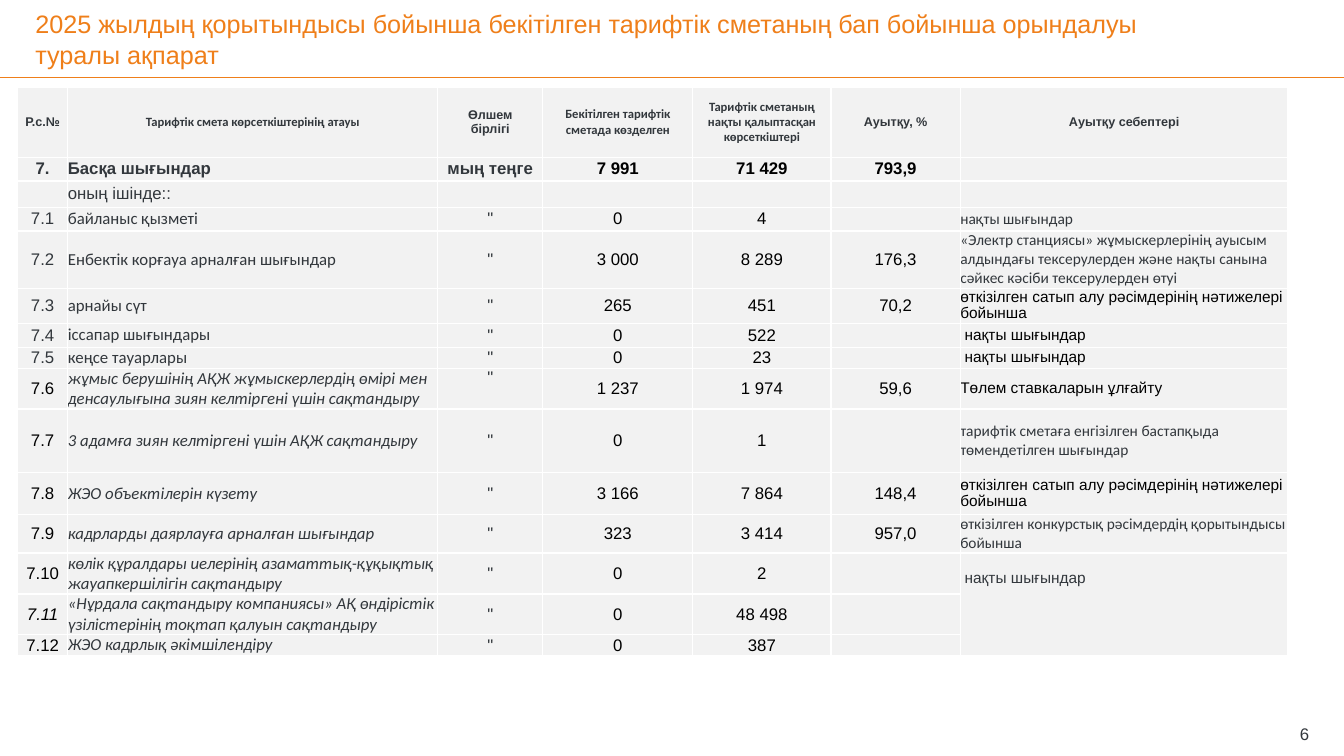
from dataclasses import dataclass, replace

from lxml.etree import SubElement
from pptx import Presentation
from pptx.dml.color import RGBColor
from pptx.enum.shapes import MSO_CONNECTOR
from pptx.enum.text import MSO_ANCHOR as ANCHOR, PP_ALIGN as ALIGN
from pptx.oxml.ns import qn
from pptx.util import Cm, Pt

ORANGE, GREY, BLACK = "EF7F1A", "32373C", "000000"
CELL_FILL, BORDER = "F2F2F2", "FFFFFF"


@dataclass(frozen=True)
class Style:
    font: str = "Arial"
    size: float = 12
    color: str = GREY
    bold: bool = False
    italic: bool = False
    align: ALIGN = ALIGN.CENTER
    spacing: float = 1.0


@dataclass(frozen=True)
class Item:
    """A table row: its height in cm, its texts and the look of its reason."""
    height: float
    number: str
    name: str
    unit: str = '"'
    approved: str = ""
    actual: str = ""
    deviation: str = ""
    reason: str = ""
    reason_style: Style = Style(size=11)


HEADER = Style(size=9, bold=True)
HEADER_CALIBRI = replace(HEADER, font="Calibri")
VALUE = Style(color=BLACK)
NAME = Style(font="Calibri", align=ALIGN.LEFT)
REASON = replace(NAME, size=11)
REASON_ARIAL = Style(size=11, color=BLACK, align=ALIGN.LEFT, spacing=0.95)
REASON_GREY = replace(REASON_ARIAL, color=GREY)

HEADER_HEIGHT = 1.76
COLUMNS = [
    (1.27, "Р.с.№", HEADER),
    (9.32, "Тарифтік смета көрсеткіштерінің атауы", HEADER_CALIBRI),
    (2.65, "Өлшем\nбірлігі", HEADER),
    (3.78, "Бекітілген тарифтік сметада көзделген", HEADER_CALIBRI),
    (3.48, "Тарифтік сметаның нақты қалыптасқан көрсеткіштері", HEADER_CALIBRI),
    (3.26, "Ауытқу, %", HEADER),
    (8.26, "Ауытқу себептері", HEADER),
]
ACTUAL_COSTS = "нақты шығындар"
TENDER = "өткізілген сатып алу рәсімдерінің нәтижелері бойынша"
ITEMS = [
    Item(0.6, "7.", "Басқа шығындар", "мың теңге", "7 991", "71 429", "793,9"),
    Item(0.66, "", "оның ішінде::", ""),
    Item(0.6, "7.1", "байланыс қызметі", '"', "0", "4", "", ACTUAL_COSTS, REASON),
    Item(1.44, "7.2", "Енбектік корғауа арналған шығындар", '"', "3 000", "8 289", "176,3",
         "«Электр станциясы» жұмыскерлерінің ауысым алдындағы тексерулерден "
         "және нақты санына сәйкес кәсіби тексерулерден өтуі", REASON),
    Item(0.86, "7.3", "арнайы сүт", '"', "265", "451", "70,2", TENDER, REASON_ARIAL),
    Item(0.6, "7.4", "іссапар шығындары", '"', "0", "522", "", ACTUAL_COSTS, REASON_ARIAL),
    Item(0.53, "7.5", "кеңсе тауарлары", '"', "0", "23", "", ACTUAL_COSTS, REASON_ARIAL),
    Item(1.03, "7.6", "жұмыс берушінің АҚЖ жұмыскерлердің өмірі мен денсаулығына "
         "зиян келтіргені үшін сақтандыру", '"', "1 237", "1 974", "59,6",
         "Төлем ставкаларын ұлғайту", REASON_ARIAL),
    Item(1.6, "7.7", "3 адамға зиян келтіргені үшін АҚЖ сақтандыру", '"', "0", "1", "",
         "тарифтік сметаға енгізілген бастапқыда төмендетілген шығындар", REASON),
    Item(1.06, "7.8", "ЖЭО объектілерін күзету", '"', "3 166", "7 864", "148,4",
         TENDER, REASON_ARIAL),
    Item(0.97, "7.9", "кадрларды даярлауға арналған шығындар", '"', "323", "3 414", "957,0",
         "өткізілген конкурстық рәсімдердің қорытындысы бойынша", REASON),
    Item(1.03, "7.10", "көлік құралдары иелерінің азаматтық-құқықтық "
         "жауапкершілігін сақтандыру", '"', "0", "2", "", ACTUAL_COSTS, REASON_GREY),
    Item(1.03, "7.11", "«Нұрдала сақтандыру компаниясы» АҚ өндірістік үзілістерінің "
         "тоқтап қалуын сақтандыру", '"', "0", "48 498"),
    Item(0.52, "7.12", "ЖЭО кадрлық әкімшілендіру", '"', "0", "387"),
]
FIRST_INSURANCE = 8  # table row of 7.6, where numbers turn black and names italic
SHARED_REASON = 12   # table row of 7.10, whose reason also covers the rows below


def rgb(color: str) -> RGBColor:
    return RGBColor.from_string(color)


def write(tf, text: str, style: Style) -> None:
    tf.word_wrap = True
    tf.text = text
    for p in tf.paragraphs:
        p.alignment = style.align
        p.line_spacing = style.spacing
        p.font.name, p.font.size = style.font, Pt(style.size)
        p.font.bold, p.font.italic = style.bold, style.italic
        p.font.color.rgb = rgb(style.color)
        if not text:  # keeps an empty cell from stretching its row
            SubElement(p._p, qn("a:endParaRPr"), sz=str(int(style.size * 100)))


def add_text(slide, left, top, width, height, text: str, style: Style) -> None:
    tf = slide.shapes.add_textbox(Cm(left), Cm(top), Cm(width), Cm(height)).text_frame
    tf.margin_left = tf.margin_right = tf.margin_top = tf.margin_bottom = 0
    tf.vertical_anchor = ANCHOR.MIDDLE
    write(tf, text, style)


def fill_cell(cell, text: str, style: Style) -> None:
    cell.margin_left = cell.margin_right = cell.margin_top = cell.margin_bottom = 0
    cell.vertical_anchor = ANCHOR.MIDDLE
    write(cell.text_frame, text, style)
    tcPr = cell._tc.get_or_add_tcPr()
    for side in ("lnL", "lnR", "lnT", "lnB"):
        ln = SubElement(tcPr, qn(f"a:{side}"), w=str(Pt(1)))
        SubElement(SubElement(ln, qn("a:solidFill")), qn("a:srgbClr"), val=BORDER)
    cell.fill.solid()
    cell.fill.fore_color.rgb = rgb(CELL_FILL)


def item_cells(row: int, item: Item) -> list[tuple[str, Style]]:
    """Texts and styles of one row, from left to right."""
    insurance = row >= FIRST_INSURANCE
    total = row == 1
    number = Style(color=BLACK if insurance else GREY, bold=total,
                   italic=item.number == "7.11")
    name = replace(NAME, italic=insurance, bold=total,
                   font="Arial" if row <= 2 else "Calibri")
    value = replace(VALUE, bold=total)
    return [(item.number, number), (item.name, name), (item.unit, Style(bold=total)),
            (item.approved, value), (item.actual, value), (item.deviation, value),
            (item.reason, item.reason_style)]


def add_tariff_table(slide) -> None:
    heights = [HEADER_HEIGHT] + [item.height for item in ITEMS]
    widths = [width for width, _, _ in COLUMNS]
    table = slide.shapes.add_table(len(heights), len(widths), Cm(0.44), Cm(2.2),
                                   Cm(sum(widths)), Cm(sum(heights))).table
    table.first_row = table.horz_banding = False
    for column, width in zip(table.columns, widths):
        column.width = Cm(width)
    for row, height in zip(table.rows, heights):
        row.height = Cm(height)

    rows = [[(text, style) for _, text, style in COLUMNS]]
    rows += [item_cells(i, item) for i, item in enumerate(ITEMS, 1)]
    for r, cells in enumerate(rows):
        for c, (text, style) in enumerate(cells):
            fill_cell(table.cell(r, c), text, style)
            if text == ACTUAL_COSTS and style.font == "Arial":
                table.cell(r, c).margin_left = Cm(0.11)

    table.cell(FIRST_INSURANCE, 2).vertical_anchor = ANCHOR.TOP
    shared = table.cell(SHARED_REASON, 6)
    shared.merge(table.cell(len(rows) - 1, 6))
    shared.vertical_anchor = ANCHOR.TOP
    shared.margin_top = Cm(0.43)


def main() -> None:
    prs = Presentation()
    prs.slide_width, prs.slide_height = Cm(33.87), Cm(19.05)
    slide = prs.slides.add_slide(prs.slide_layouts[6])
    add_text(slide, 31.72, 18.16, 1.27, 0.64, "6", Style(align=ALIGN.RIGHT))
    rule = slide.shapes.add_connector(MSO_CONNECTOR.STRAIGHT, 0, Cm(1.96),
                                      prs.slide_width, Cm(1.96))
    rule.line.color.rgb = rgb(ORANGE)
    rule.line.width = Pt(0.75)
    SubElement(rule._element.spPr, qn("a:effectLst"))
    add_text(slide, 0.89, 0, 29.39, 1.96,
             "2025 жылдың қорытындысы бойынша бекітілген тарифтік сметаның "
             "бап бойынша орындалуы туралы ақпарат",
             Style(size=18, color=ORANGE, align=ALIGN.LEFT))
    add_tariff_table(slide)
    prs.save("out.pptx")


if __name__ == "__main__":
    main()
